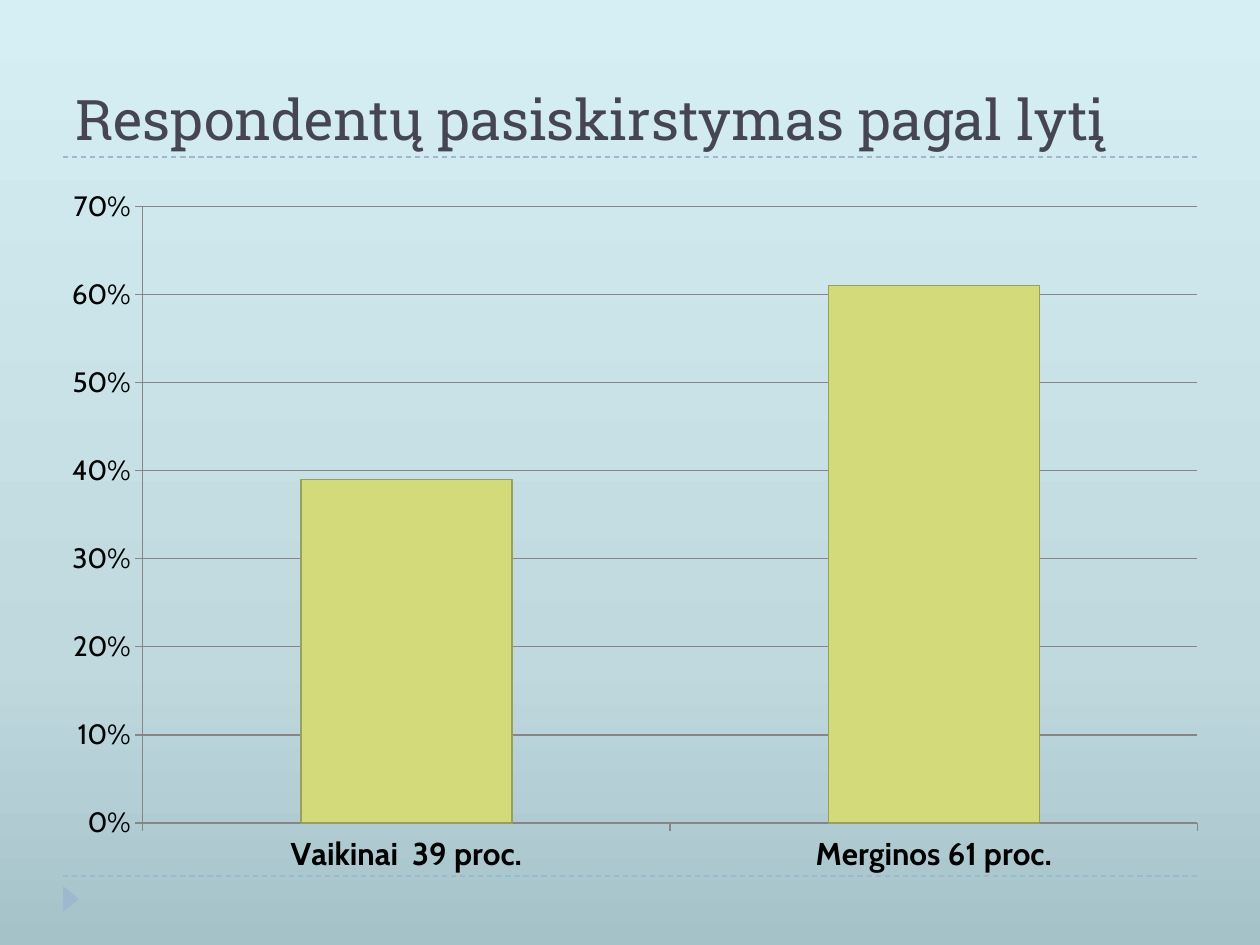
from copy import deepcopy

from lxml.etree import SubElement
from pptx import Presentation
from pptx.chart.data import CategoryChartData
from pptx.dml.color import RGBColor
from pptx.enum.chart import XL_CHART_TYPE, XL_TICK_MARK
from pptx.enum.dml import MSO_LINE
from pptx.enum.shapes import MSO_CONNECTOR, MSO_SHAPE
from pptx.enum.text import MSO_ANCHOR, PP_ALIGN
from pptx.oxml.ns import qn
from pptx.util import Emu, Pt

PX_PER_INCH = 126
HEADING_FONT = "Roboto Slab"
CHART_FONT = "Cabin"
ACCENT = "9FB8CD"
BACKGROUND_STOPS = [(0, "A5C2C9"), (0.3, "C0D9DF"), (1, "D5EFF5")]


def px(length):
    return Emu(round(length * 914400 / PX_PER_INCH))


def color(hex_string):
    return RGBColor.from_string(hex_string)


def paint_background(slide):
    fill = slide.background.fill
    fill.gradient()
    fill.gradient_angle = 90
    stop_list = slide.element.find(".//" + qn("a:gsLst"))
    stop_list.append(deepcopy(stop_list[-1]))
    for stop, (position, shade) in zip(fill.gradient_stops, BACKGROUND_STOPS):
        stop.position = position
        stop.color.rgb = color(shade)


def add_dashed_rule(slide, y):
    rule = slide.shapes.add_connector(
        MSO_CONNECTOR.STRAIGHT, px(63), px(y), px(1197), px(y))
    rule.line.color.rgb = color(ACCENT)
    rule.line.width = Pt(0.75)
    rule.line.dash_style = MSO_LINE.DASH
    SubElement(rule._element.spPr, qn("a:effectLst"))


def add_page_marker(slide):
    marker = slide.shapes.add_shape(
        MSO_SHAPE.ISOSCELES_TRIANGLE, px(58), px(891), px(26), px(16))
    marker.rotation = 90
    marker.shadow.inherit = False
    marker.fill.solid()
    marker.fill.fore_color.rgb = color(ACCENT)
    marker.line.fill.background()


def fill_title(slide, text):
    title = slide.shapes.title
    title.left, title.top, title.width, title.height = map(px, (63, 32, 1134, 126))
    frame = title.text_frame
    frame.word_wrap = True
    frame.vertical_anchor = MSO_ANCHOR.BOTTOM
    para = frame.paragraphs[0]
    para.alignment = PP_ALIGN.LEFT
    span = para.add_run()
    span.text = text
    span.font.name = HEADING_FONT
    span.font.size = Pt(32)
    span.font.color.rgb = color("464653")


def format_axis(axis, size, bold):
    axis.major_tick_mark = XL_TICK_MARK.OUTSIDE
    axis.minor_tick_mark = XL_TICK_MARK.NONE
    axis.format.line.color.rgb = color("868686")
    axis.format.line.width = Pt(0.75)
    font = axis.tick_labels.font
    font.name = CHART_FONT
    font.size = Pt(size)
    font.bold = bold
    font.color.rgb = color("000000")


def set_plot_area(chart, x, y, width, height):
    plot_area = chart._chartSpace.chart.plotArea
    layout = plot_area.find(qn("c:layout"))
    if layout is None:
        layout = SubElement(plot_area, qn("c:layout"))
        plot_area.insert(0, layout)
    manual = SubElement(layout, qn("c:manualLayout"))
    settings = [("layoutTarget", "inner"), ("xMode", "edge"), ("yMode", "edge"),
                ("x", x), ("y", y), ("w", width), ("h", height)]
    for name, value in settings:
        SubElement(manual, qn("c:" + name)).set("val", str(value))


def add_gender_chart(slide):
    data = CategoryChartData(number_format="0%")
    data.categories = ["Vaikinai  39 proc.", "Merginos 61 proc."]
    data.add_series("Series 1", (0.39, 0.61))
    chart = slide.shapes.add_chart(
        XL_CHART_TYPE.COLUMN_CLUSTERED, px(49), px(178), px(1172), px(709), data).chart
    chart.has_title = False
    chart.has_legend = False
    chart.font.name = CHART_FONT
    chart.font.size = Pt(10)
    chart.font.color.rgb = color("000000")
    set_plot_area(chart, 0.08, 0.04, 0.9, 0.87)

    # Columns
    plot = chart.plots[0]
    plot.gap_width = 150
    plot.vary_by_categories = False
    columns = plot.series[0].format
    columns.fill.solid()
    columns.fill.fore_color.rgb = color("D2DA7A")
    columns.line.color.rgb = color("9A9F59")
    columns.line.width = Pt(0.75)

    # Axes
    format_axis(chart.category_axis, 18, True)
    values = chart.value_axis
    format_axis(values, 16, False)
    values.minimum_scale, values.maximum_scale, values.major_unit = 0, 0.7, 0.1
    values.tick_labels.number_format = "0%"
    values.tick_labels.number_format_is_linked = False
    values.has_major_gridlines = True
    values.major_gridlines.format.line.color.rgb = color("868686")
    values.major_gridlines.format.line.width = Pt(0.75)


def main():
    deck = Presentation()
    deck.slide_width, deck.slide_height = px(1260), px(945)
    page = deck.slides.add_slide(deck.slide_layouts[5])

    # Backdrop
    paint_background(page)
    for y in (876, 157):
        add_dashed_rule(page, y)
    add_page_marker(page)

    # Content
    fill_title(page, "Respondentų pasiskirstymas pagal lytį")
    add_gender_chart(page)
    deck.save("out.pptx")


if __name__ == "__main__":
    main()
